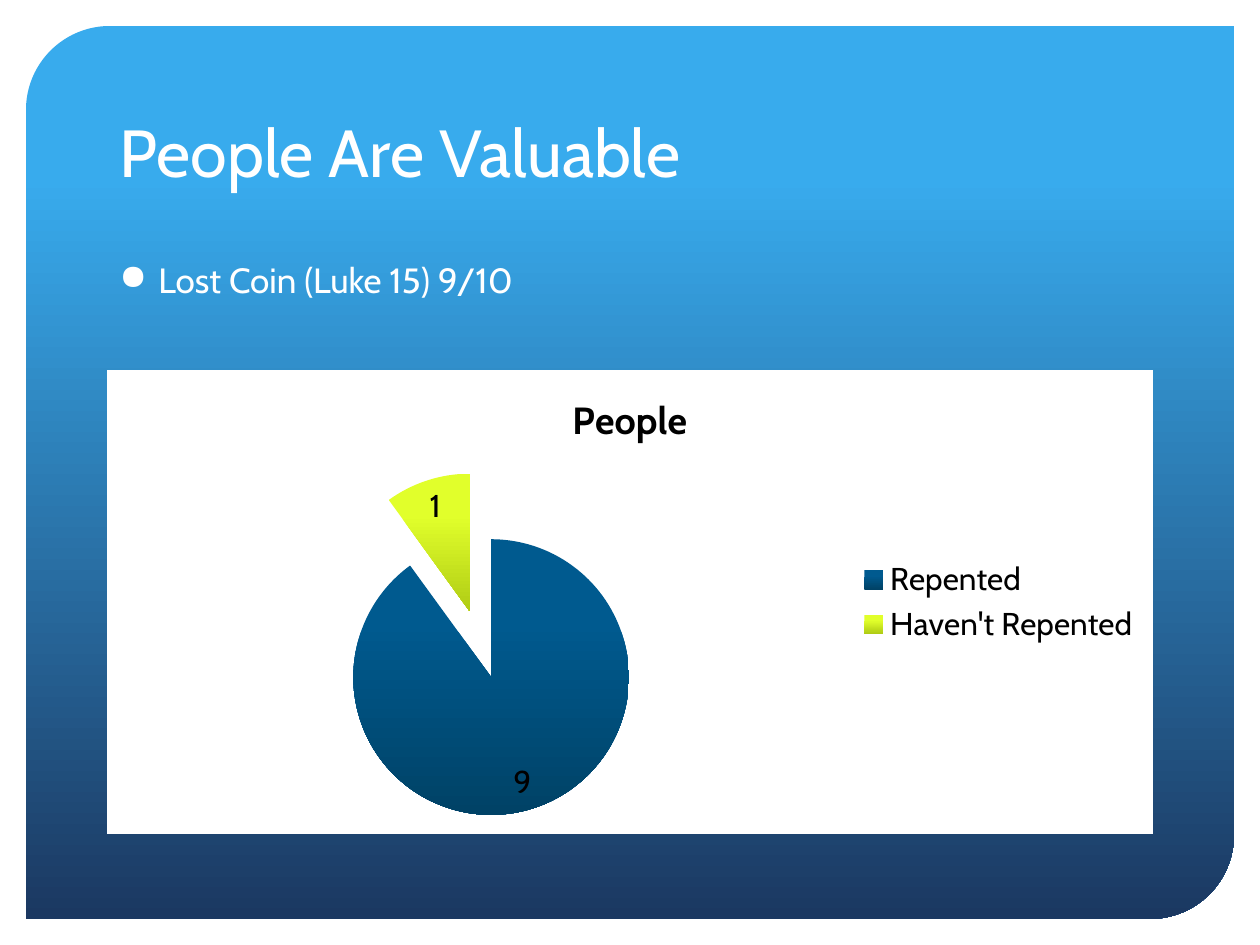
from dataclasses import dataclass

from lxml.etree import SubElement
from pptx import Presentation
from pptx.chart.data import CategoryChartData
from pptx.dml.color import RGBColor
from pptx.enum.chart import XL_CHART_TYPE, XL_LABEL_POSITION, XL_LEGEND_POSITION
from pptx.enum.shapes import MSO_SHAPE
from pptx.enum.text import MSO_ANCHOR, MSO_AUTO_SIZE, PP_ALIGN
from pptx.oxml import parse_xml
from pptx.oxml.ns import nsdecls, qn
from pptx.util import Emu, Pt

PIXELS_PER_INCH = 126


@dataclass(frozen=True)
class Theme:
    font: str = "Cabin"
    light: str = "FFFFFF"
    dark: str = "000000"
    panel: tuple = ((0.17, "38ABED"), (1, "1B3861"))
    repented: tuple = ((0.3, "005A8F"), (1, "004266"))
    not_repented: tuple = ((0.3, "E1FF2B"), (1, "B0CC15"))
    title_size: float = 38
    body_size: float = 20
    chart_size: float = 18
    chart_title_size: float = 21.6


def px(value):
    return Emu(round(value * 914400 / PIXELS_PER_INCH))


def box(*lengths):
    return [px(length) for length in lengths]


def apply(target, values):
    for name, value in values.items():
        setattr(target, name, value)


class SlideBuilder:
    def __init__(self, slide, theme):
        self.slide = slide
        self.theme = theme

    def style_font(self, font, size, color, bold=False):
        apply(font, {"name": self.theme.font, "size": Pt(size), "bold": bold})
        font.color.rgb = RGBColor.from_string(color)

    def fill_gradient(self, fill, stops):
        fill.gradient()
        fill.gradient_angle = 270
        for stop, (position, color) in zip(fill.gradient_stops, stops):
            stop.position = position
            stop.color.rgb = RGBColor.from_string(color)

    def panel(self, left, top, width, height):
        shape = self.slide.shapes.add_shape(
            MSO_SHAPE.ROUND_2_DIAG_RECTANGLE, *box(left, top, width, height))
        shape.adjustments[0] = 0.094
        shape.adjustments[1] = 0
        shape.shadow.inherit = False
        self.fill_gradient(shape.fill, self.theme.panel)
        shape.line.fill.background()
        self.slide.shapes._spTree.insert(2, shape._element)

    def title(self, text, left, top, width, height):
        shape = self.slide.shapes.title
        apply(shape, dict(zip(("left", "top", "width", "height"),
                              box(left, top, width, height))))
        apply(shape.text_frame, {
            "text": text, "word_wrap": True, "auto_size": MSO_AUTO_SIZE.NONE,
            "vertical_anchor": MSO_ANCHOR.BOTTOM})
        paragraph = shape.text_frame.paragraphs[0]
        paragraph.alignment = PP_ALIGN.LEFT
        self.style_font(paragraph.runs[0].font, self.theme.title_size, self.theme.light)

    def bullet(self, text, left, top, width, height):
        shape = self.slide.shapes.add_textbox(*box(left, top, width, height))
        apply(shape.text_frame, {"text": text, "word_wrap": True})
        paragraph = shape.text_frame.paragraphs[0]
        properties = paragraph._p.get_or_add_pPr()
        indent = px(39)
        properties.set("marL", str(indent))
        properties.set("indent", str(-indent))
        SubElement(properties, qn("a:buChar")).set("char", "●")
        self.style_font(paragraph.runs[0].font, self.theme.body_size, self.theme.light)

    def pie(self, name, categories, values, slice_fills, left, top, width, height):
        theme = self.theme
        data = CategoryChartData()
        data.categories = categories
        data.add_series(name, values)
        chart = self.slide.shapes.add_chart(
            XL_CHART_TYPE.PIE, *box(left, top, width, height), data).chart
        self.style_font(chart.font, theme.chart_size, theme.dark)
        chart._chartSpace.find(qn("c:txPr")).addprevious(parse_xml(
            f'<c:spPr {nsdecls("c", "a")}><a:solidFill><a:srgbClr val="{theme.light}"/>'
            '</a:solidFill><a:ln><a:noFill/></a:ln></c:spPr>'))

        chart.has_title = True
        chart.chart_title.text_frame.text = name
        title_run = chart.chart_title.text_frame.paragraphs[0].runs[0]
        self.style_font(title_run.font, theme.chart_title_size, theme.dark, True)

        chart.has_legend = True
        apply(chart.legend, {"position": XL_LEGEND_POSITION.RIGHT,
                             "include_in_layout": False})
        self.style_font(chart.legend.font, theme.chart_size, theme.dark)

        plot = chart.plots[0]
        apply(plot, {"vary_by_categories": True, "has_data_labels": True})
        apply(plot.data_labels, {"show_value": True, "show_percentage": False,
                                 "position": XL_LABEL_POSITION.INSIDE_END})
        self.style_font(plot.data_labels.font, theme.chart_size, theme.dark)

        series = plot.series[0]
        series._element.find(qn("c:tx")).addnext(
            parse_xml(f'<c:explosion {nsdecls("c")} val="25"/>'))
        for index, stops in enumerate(slice_fills):
            point_format = series.points[index].format
            self.fill_gradient(point_format.fill, stops)
            point_format.line.fill.background()


def main():
    theme = Theme()
    presentation = Presentation()
    apply(presentation, {"slide_width": px(1260), "slide_height": px(945)})
    slide = presentation.slides.add_slide(presentation.slide_layouts[5])
    slide.background.fill.solid()
    slide.background.fill.fore_color.rgb = RGBColor.from_string(theme.light)

    builder = SlideBuilder(slide, theme)
    builder.panel(26, 26, 1208, 893)
    builder.title("People Are Valuable", 107, 53, 1045, 144)
    builder.bullet("Lost Coin (Luke 15) 9/10", 107, 252, 1046, 283)
    builder.pie("People", ("Repented", "Haven't Repented"), (9, 1),
                (theme.repented, theme.not_repented), 107, 370, 1046, 464)
    presentation.save("out.pptx")


if __name__ == "__main__":
    main()
